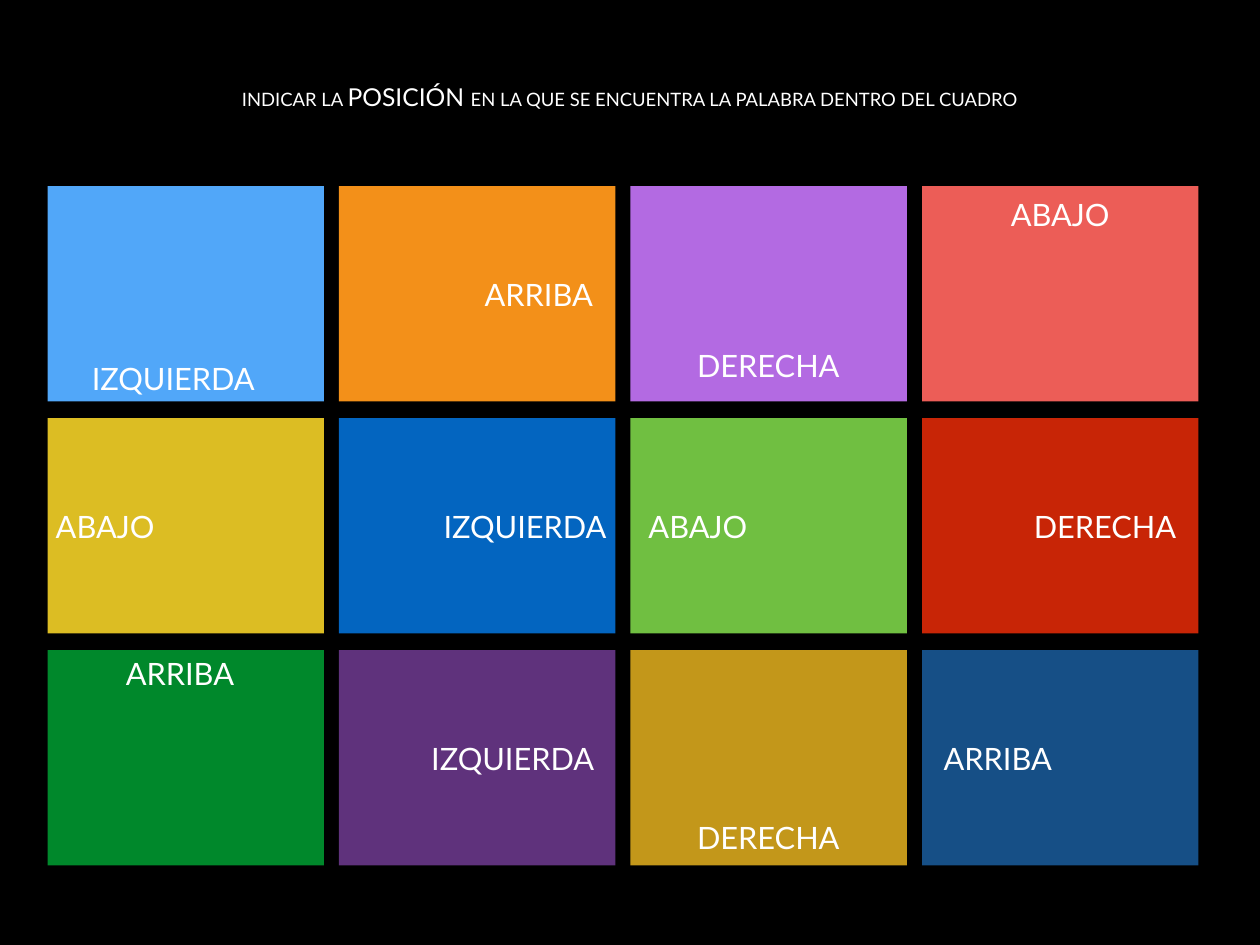
import dataclasses

import pptx
import pptx.dml.color
import pptx.enum.shapes
import pptx.enum.text
import pptx.util

Pt = pptx.util.Pt


@dataclasses.dataclass(frozen=True)
class Theme:
    font: str = "Lato"
    background: str = "000000"
    text: str = "FFFFFF"
    instruction_size: int = 15
    emphasis_size: int = 20
    word_size: int = 25
    inset: int = 4


@dataclasses.dataclass(frozen=True)
class Box:
    left: float
    top: float
    width: float
    height: float

    def lengths(self):
        return [Pt(length) for length in dataclasses.astuple(self)]


@dataclasses.dataclass(frozen=True)
class Card:
    color: str
    word: str
    word_left: float
    word_top: float


THEME = Theme()
SLIDE_WIDTH, SLIDE_HEIGHT = 1024, 768
INSTRUCTION_BOX = Box(190.8, 62.6, 642.2, 31.7)
GRID_BOX = Box(38.6, 151.2, 935.4, 552.2)
COLUMN_GAP, ROW_GAP = 12.2, 13.6
WORD_HEIGHT = 38.2
WORD_WIDTHS = {"IZQUIERDA": 145.4, "ARRIBA": 101.5, "DERECHA": 126, "ABAJO": 92.2}

INSTRUCTION = [
    ("INDICAR LA ", THEME.instruction_size),
    ("POSICIÓN ", THEME.emphasis_size),
    ("EN LA QUE SE ENCUENTRA LA PALABRA DENTRO DEL CUADRO", THEME.instruction_size),
]

CARD_ROWS = [
    [
        Card("51A7F9", "IZQUIERDA", 29.5, 136.8),
        Card("F39019", "ARRIBA", 111.6, 68.4),
        Card("B36AE2", "DERECHA", 49, 126.7),
        Card("EC5D57", "ABAJO", 66.2, 3.6),
    ],
    [
        Card("DCBD23", "ABAJO", 0.7, 68.4),
        Card("0365C0", "IZQUIERDA", 78.5, 68.4),
        Card("70BF41", "ABAJO", 8.6, 68.4),
        Card("C82506", "DERECHA", 85.7, 68.4),
    ],
    [
        Card("00882B", "ARRIBA", 56.9, 0),
        Card("5F327C", "IZQUIERDA", 68.4, 68.4),
        Card("C3971A", "DERECHA", 49, 133.2),
        Card("164F86", "ARRIBA", 10.8, 68.4),
    ],
]


def paint(fill, color):
    fill.solid()
    fill.fore_color.rgb = pptx.dml.color.RGBColor.from_string(color)


def add_run(paragraph, text, *, size, color=THEME.text, font=THEME.font):
    run = paragraph.add_run()
    run.text = text
    run.font.name = font
    run.font.size = Pt(size)
    run.font.color.rgb = pptx.dml.color.RGBColor.from_string(color)


def add_label(slide, box, runs):
    frame = slide.shapes.add_textbox(*box.lengths()).text_frame
    frame.word_wrap = False
    frame.auto_size = pptx.enum.text.MSO_AUTO_SIZE.SHAPE_TO_FIT_TEXT
    frame.vertical_anchor = pptx.enum.text.MSO_ANCHOR.MIDDLE
    frame.margin_left = frame.margin_right = Pt(THEME.inset)
    frame.margin_top = frame.margin_bottom = Pt(THEME.inset)
    paragraph = frame.paragraphs[0]
    paragraph.alignment = pptx.enum.text.PP_ALIGN.CENTER
    for text, size in runs:
        add_run(paragraph, text, size=size)


def add_card(slide, box, card):
    shape = slide.shapes.add_shape(
        pptx.enum.shapes.MSO_SHAPE.RECTANGLE, *box.lengths()
    )
    shape.shadow.inherit = False
    shape.line.fill.background()
    paint(shape.fill, card.color)
    word_box = Box(
        box.left + card.word_left,
        box.top + card.word_top,
        WORD_WIDTHS[card.word],
        WORD_HEIGHT,
    )
    add_label(slide, word_box, [(card.word, THEME.word_size)])


def add_card_grid(slide, box, rows):
    column_count = len(rows[0])
    width = (box.width - COLUMN_GAP * (column_count - 1)) / column_count
    height = (box.height - ROW_GAP * (len(rows) - 1)) / len(rows)
    for row_index, row in enumerate(rows):
        for column_index, card in enumerate(row):
            left = box.left + column_index * (width + COLUMN_GAP)
            top = box.top + row_index * (height + ROW_GAP)
            add_card(slide, Box(left, top, width, height), card)


def main():
    presentation = pptx.Presentation()
    presentation.slide_width = Pt(SLIDE_WIDTH)
    presentation.slide_height = Pt(SLIDE_HEIGHT)
    slide = presentation.slides.add_slide(presentation.slide_layouts[6])
    paint(slide.background.fill, THEME.background)
    add_label(slide, INSTRUCTION_BOX, INSTRUCTION)
    add_card_grid(slide, GRID_BOX, CARD_ROWS)
    presentation.save("out.pptx")


if __name__ == "__main__":
    main()
